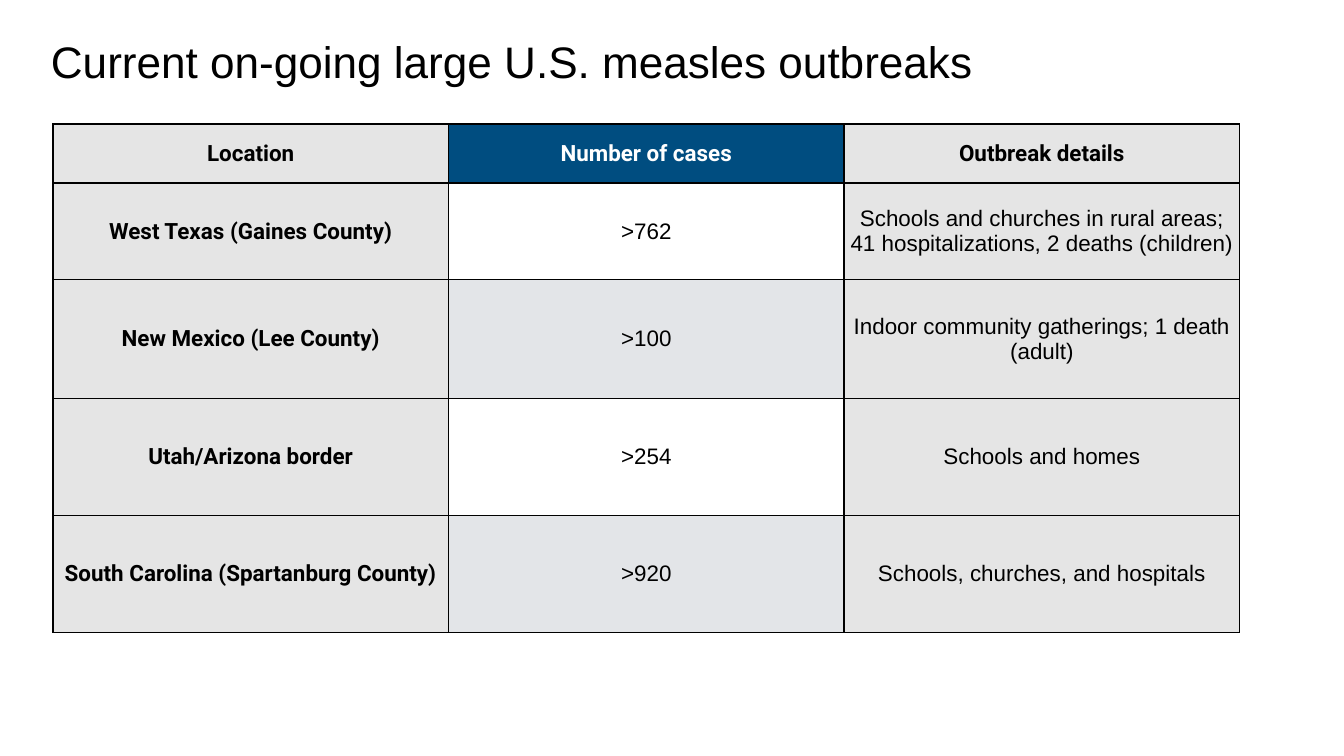
from typing import NamedTuple

from lxml import etree
from pptx import Presentation
from pptx.dml.color import RGBColor
from pptx.enum.text import MSO_ANCHOR, MSO_AUTO_SIZE, PP_ALIGN
from pptx.oxml.ns import qn
from pptx.util import Inches, Pt

MIDDLE = MSO_ANCHOR.MIDDLE
LEFT, CENTER = PP_ALIGN.LEFT, PP_ALIGN.CENTER
NO_AUTOFIT = MSO_AUTO_SIZE.NONE
BLACK, WHITE, NAVY, PALE = "000000", "FFFFFF", "004D80", "E3E5E8"
BORDER_PT = 2.25
COL_WIDTH = 7.85
HEADER_HEIGHT = 1.17


class Outbreak(NamedTuple):
    location: str
    cases: str
    details: str
    height: float


HEADERS = ("Location", "Number of cases", "Outbreak details")
OUTBREAKS = [
    Outbreak("West Texas (Gaines County)", ">762",
             "Schools and churches in rural areas; 41 hospitalizations, 2 deaths (children)", 1.92),
    Outbreak("New Mexico (Lee County)", ">100",
             "Indoor community gatherings; 1 death (adult)", 2.36),
    Outbreak("Utah/Arizona border", ">254", "Schools and homes", 2.32),
    Outbreak("South Carolina (Spartanburg County)", ">920",
             "Schools, churches, and hospitals", 2.32),
]


def rgb(color: str) -> RGBColor:
    return RGBColor.from_string(color)


def add_run(p, text: str, font: str, size: float, color: str, bold: bool = False) -> None:
    r = p.add_run()
    r.text = text
    r.font.name, r.font.size, r.font.bold = font, Pt(size), bold
    r.font.color.rgb = rgb(color)


def add_borders(cell) -> None:
    tc_pr = cell._tc.get_or_add_tcPr()
    for side in ("a:lnL", "a:lnR", "a:lnT", "a:lnB"):
        ln = etree.SubElement(tc_pr, qn(side), w=str(Pt(BORDER_PT)))
        fill = etree.SubElement(ln, qn("a:solidFill"))
        etree.SubElement(fill, qn("a:srgbClr"), val=BLACK)


def fill_cell(cell, color: str, opacity: int = 100) -> None:
    cell.fill.solid()
    cell.fill.fore_color.rgb = rgb(color)
    if opacity < 100:
        clr = cell._tc.tcPr.find(qn("a:solidFill")).find(qn("a:srgbClr"))
        etree.SubElement(clr, qn("a:alpha"), val=str(opacity * 1000))


def write_cell(cell, text: str, row: int, col: int) -> None:
    bold = row == 0 or col == 0
    cell.vertical_anchor = MIDDLE
    cell.margin_left = cell.margin_right = Inches(0.06)
    cell.margin_top = cell.margin_bottom = Inches(0.06)
    add_borders(cell)
    if col != 1:
        fill_cell(cell, BLACK, 10)
    elif row == 0:
        fill_cell(cell, NAVY)
    else:
        fill_cell(cell, WHITE if row % 2 else PALE)
    p = cell.text_frame.paragraphs[0]
    p.alignment = CENTER
    color = WHITE if (row, col) == (0, 1) else BLACK
    add_run(p, text, "Roboto" if bold else "Arial", 32, color, bold)


def add_title(s, text: str) -> None:
    sp = s.shapes.title
    sp.left, sp.top = Inches(0.91), Inches(0.67)
    sp.width, sp.height = Inches(23), Inches(1.19)
    tf = sp.text_frame
    tf.auto_size, tf.word_wrap, tf.vertical_anchor = NO_AUTOFIT, True, MIDDLE
    tf.margin_left = tf.margin_right = Inches(0.1)
    tf.margin_top = tf.margin_bottom = Inches(0.1)
    p = tf.paragraphs[0]
    p.alignment, p.line_spacing = LEFT, 0.9
    add_run(p, text, "Arial", 63, BLACK)


def add_outbreak_table(s, outbreaks: list[Outbreak]) -> None:
    heights = [HEADER_HEIGHT] + [o.height for o in outbreaks]
    rows = [HEADERS] + [(o.location, o.cases, o.details) for o in outbreaks]
    table = s.shapes.add_table(
        len(rows), len(HEADERS), Inches(1.05), Inches(2.46),
        Inches(COL_WIDTH * len(HEADERS)), Inches(sum(heights))).table
    table.first_row = table.horz_banding = False
    for column in table.columns:
        column.width = Inches(COL_WIDTH)
    for i, (height, texts) in enumerate(zip(heights, rows)):
        table.rows[i].height = Inches(height)
        for j, text in enumerate(texts):
            write_cell(table.cell(i, j), text, i, j)


def main() -> None:
    """Build the measles outbreak slide."""
    prs = Presentation()
    prs.slide_width, prs.slide_height = Inches(26.67), Inches(15)
    s = prs.slides.add_slide(prs.slide_layouts[5])
    add_title(s, "Current on-going large U.S. measles outbreaks")
    add_outbreak_table(s, OUTBREAKS)
    prs.save("out.pptx")


if __name__ == "__main__":
    main()
